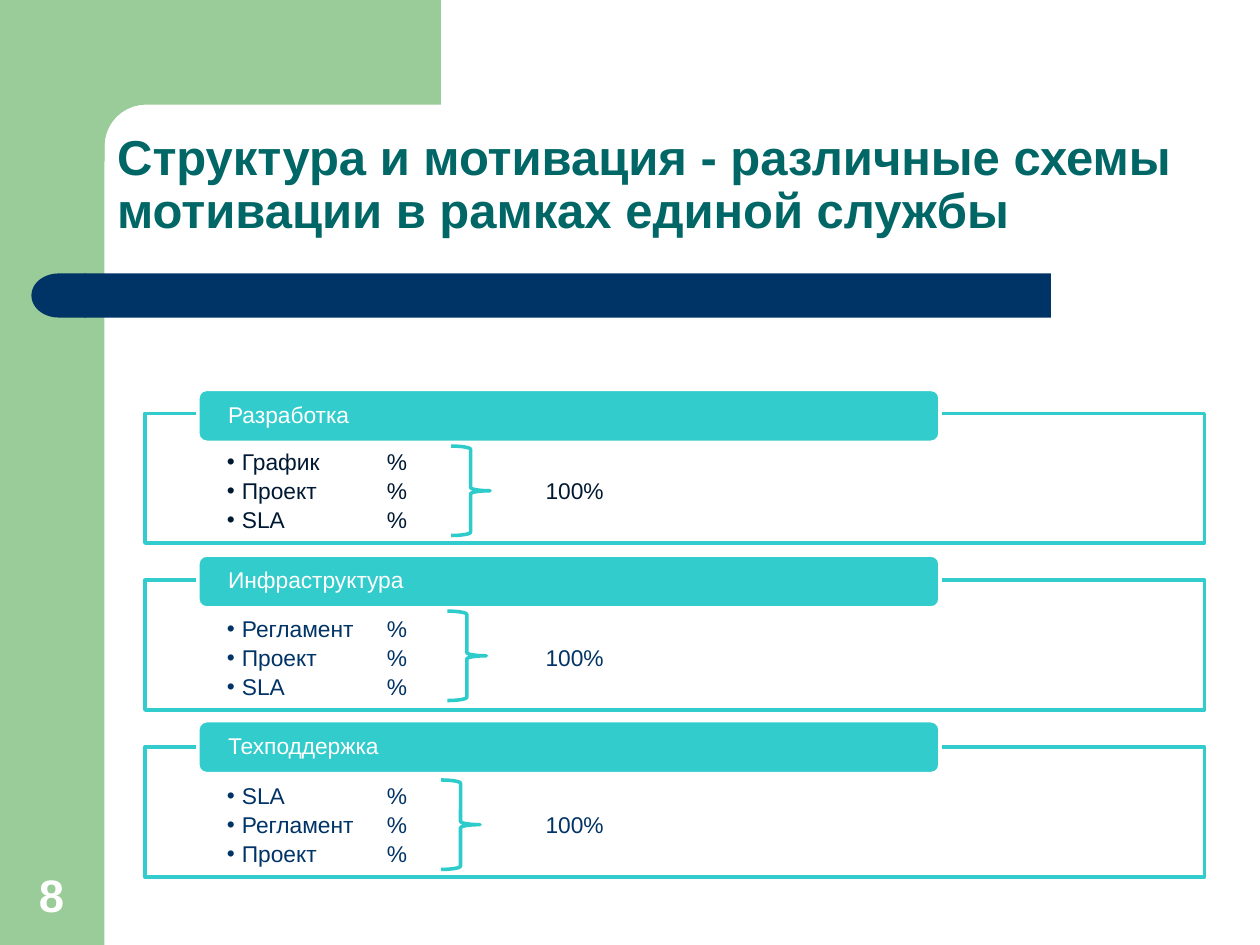
from math import cos, pi, sin

from lxml import etree
from pptx import Presentation
from pptx.dml.color import RGBColor
from pptx.enum.shapes import MSO_SHAPE
from pptx.enum.text import MSO_ANCHOR, MSO_AUTO_SIZE, PP_ALIGN
from pptx.oxml.ns import qn
from pptx.util import Inches, Pt

RECT, ROUND = MSO_SHAPE.RECTANGLE, MSO_SHAPE.ROUNDED_RECTANGLE
DELAY, BRACE = MSO_SHAPE.FLOWCHART_DELAY, MSO_SHAPE.RIGHT_BRACE
TOP, MIDDLE, BOTTOM = MSO_ANCHOR.TOP, MSO_ANCHOR.MIDDLE, MSO_ANCHOR.BOTTOM
LEFT, FIXED = PP_ALIGN.LEFT, MSO_AUTO_SIZE.NONE

# The slide is a grid of 100 columns by 75 rows
COLS, ROWS = 100, 75
COLORS = {
    "green": "99CC99", "navy": "003366", "dark": "001933", "teal": "006666",
    "aqua": "33CCCC", "brace": "2ECBCB", "white": "FFFFFF",
}
# Header, item colour, items, brace column and row
BLOCKS = [
    ("Разработка", "dark",
     ["График\t%", "Проект\t%\t100%", "SLA\t%"], 35.8, 35.4),
    ("Инфраструктура", "navy",
     ["Регламент\t%", "Проект\t%\t100%", "SLA\t%"], 35.5, 48.5),
    ("Техподдержка", "navy",
     ["SLA\t%", "Регламент\t%\t100%", "Проект\t%"], 35, 61.9),
]
STOPS = (1.27, 2.53)


def unit(n):
    return Inches(n / 10)


def color(name):
    return RGBColor.from_string(COLORS[name])


def apply(target, values):
    for name, value in values.items():
        setattr(target, name, value)


def place(shape, box):
    apply(shape, dict(zip(("left", "top", "width", "height"), map(unit, box))))


def paint(shape, fill=None, line=None):
    if fill:
        shape.fill.solid()
        shape.fill.fore_color.rgb = color(fill)
    else:
        shape.fill.background()
    if line:
        shape.line.color.rgb = color(line)
        shape.line.width = Pt(2)
    else:
        shape.line.fill.background()


def add_shape(slide, kind, box, fill=None, line=None):
    shape = slide.shapes.add_shape(kind, *map(unit, box))
    shape.shadow.inherit = False
    paint(shape, fill, line)
    return shape


def write(shape, lines, hue, size, pad, anchor, bold=False, space=0.9, after=0):
    frame = shape.text_frame
    sides = ("margin_left", "margin_top", "margin_right", "margin_bottom")
    apply(frame, {"word_wrap": True, "auto_size": FIXED,
                  "vertical_anchor": anchor, **dict(zip(sides, map(Inches, pad)))})
    frame.text = "\n".join(lines)
    for para in frame.paragraphs:
        apply(para, {"alignment": LEFT, "line_spacing": space,
                     "space_before": Pt(0), "space_after": Pt(after)})
        for run in para.runs:
            apply(run.font, {"name": "Arial", "size": Pt(size), "bold": bold})
            run.font.color.rgb = color(hue)


def add_bullets(shape):
    for para in shape.text_frame.paragraphs:
        props = para._p.get_or_add_pPr()
        props.set("marL", str(Inches(0.12)))
        props.set("indent", str(-Inches(0.12)))
        etree.SubElement(props, qn("a:buFont"), typeface="Arial")
        etree.SubElement(props, qn("a:buChar"), char="•")
        tabs = etree.SubElement(props, qn("a:tabLst"))
        for stop in STOPS:
            etree.SubElement(tabs, qn("a:tab"), pos=str(Inches(stop)), algn="l")


def add_corner(slide):
    # Green block with a rounded inner corner
    mid, radius, steps = 11.6, 3.3, 10
    turns = [pi / 2 * i / steps for i in range(steps + 1)]
    curve = [(mid - radius * sin(t), mid - radius * cos(t)) for t in turns]
    points = [(35, 0), (35, 8.3), *curve, (8.3, 12.8), (5, 12.8), (5, 0)]
    spots = [(unit(x), unit(y)) for x, y in points]
    path = slide.shapes.build_freeform(*spots[0])
    path.add_line_segments(spots[1:], close=True)
    shape = path.convert_to_shape()
    shape.shadow.inherit = False
    paint(shape, "green")


def add_frame(slide):
    add_shape(slide, RECT, (0, 0, 8.3, ROWS), "green")
    add_corner(slide)
    bar = add_shape(slide, ROUND, (6.7, 21.7, 76.7, 3.5), "navy")
    bar.adjustments[0] = 0
    cap = add_shape(slide, DELAY, (2.5, 21.7, 4.3, 3.5), "navy")
    cap.element.spPr.find(qn("a:xfrm")).set("flipH", "1")


def raise_up(shape):
    shape.element.getparent().append(shape.element)


def add_block(slide, panel, index, head, hue, items):
    # Outlined list with a header tab over its top edge
    raise_up(panel)
    place(panel, (11.5, 32.8 + 13.25 * index, 84.1, 10.3))
    paint(panel, "white", "aqua")
    write(panel, items, hue, 13, (0.65, 0.3, 0.65, 0.1), TOP, after=2.5)
    add_bullets(panel)
    tab = add_shape(slide, ROUND, (15.7, 30.9 + 13.15 * index, 58.9, 4.2),
                    "aqua", "white")
    write(tab, [head], "white", 13, (0.22, 0, 0.22, 0), MIDDLE)


def main():
    deck = Presentation()
    deck.slide_width, deck.slide_height = unit(COLS), unit(ROWS)
    slide = deck.slides.add_slide(deck.slide_layouts[4])
    title, *panels = slide.placeholders
    spare = panels.pop()
    spare.element.getparent().remove(spare.element)

    add_frame(slide)

    # Title
    raise_up(title)
    place(title, (8.3, 11.6, 98.4, 12.5))
    write(title, ["Структура и мотивация - различные схемы "
                  "мотивации в рамках единой службы"],
          "teal", 28, (0.1, 0.05, 0.1, 0.51), BOTTOM, bold=True)

    # Lists, then the braces over them
    for index, (panel, block) in enumerate(zip(panels, BLOCKS)):
        add_block(slide, panel, index, *block[:3])
    for *_, col, row in BLOCKS:
        add_shape(slide, BRACE, (col, row, 3.1, 7.1), line="brace")

    # Slide number
    number = slide.shapes.add_textbox(*map(unit, (0.9, 68.3, 6.4, 5.3)))
    write(number, ["8"], "white", 26, (0.1, 0.05, 0.1, 0.05), BOTTOM,
          bold=True, space=1.0)
    number.text_frame.paragraphs[0].alignment = PP_ALIGN.CENTER

    deck.save("out.pptx")


if __name__ == "__main__":
    main()
